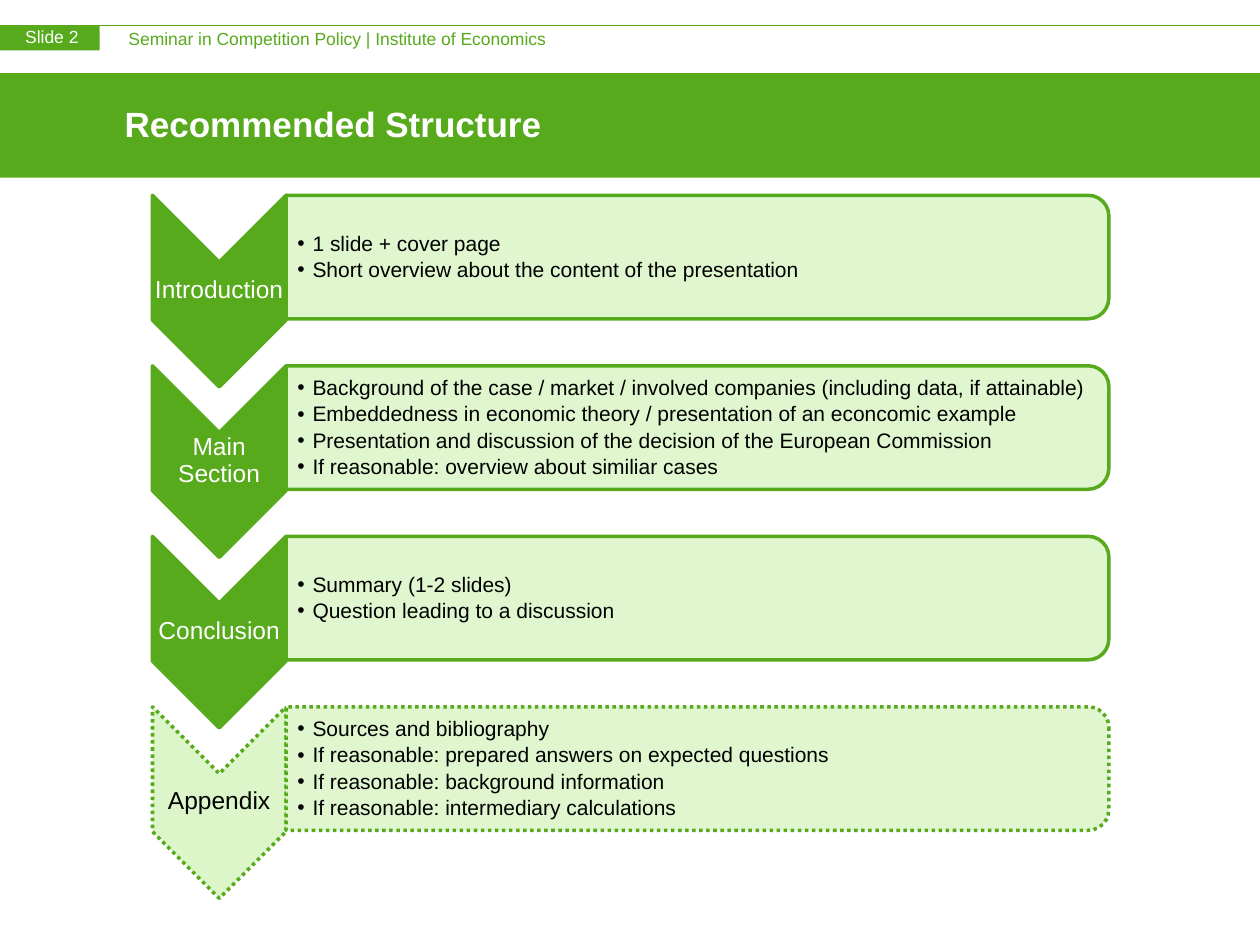
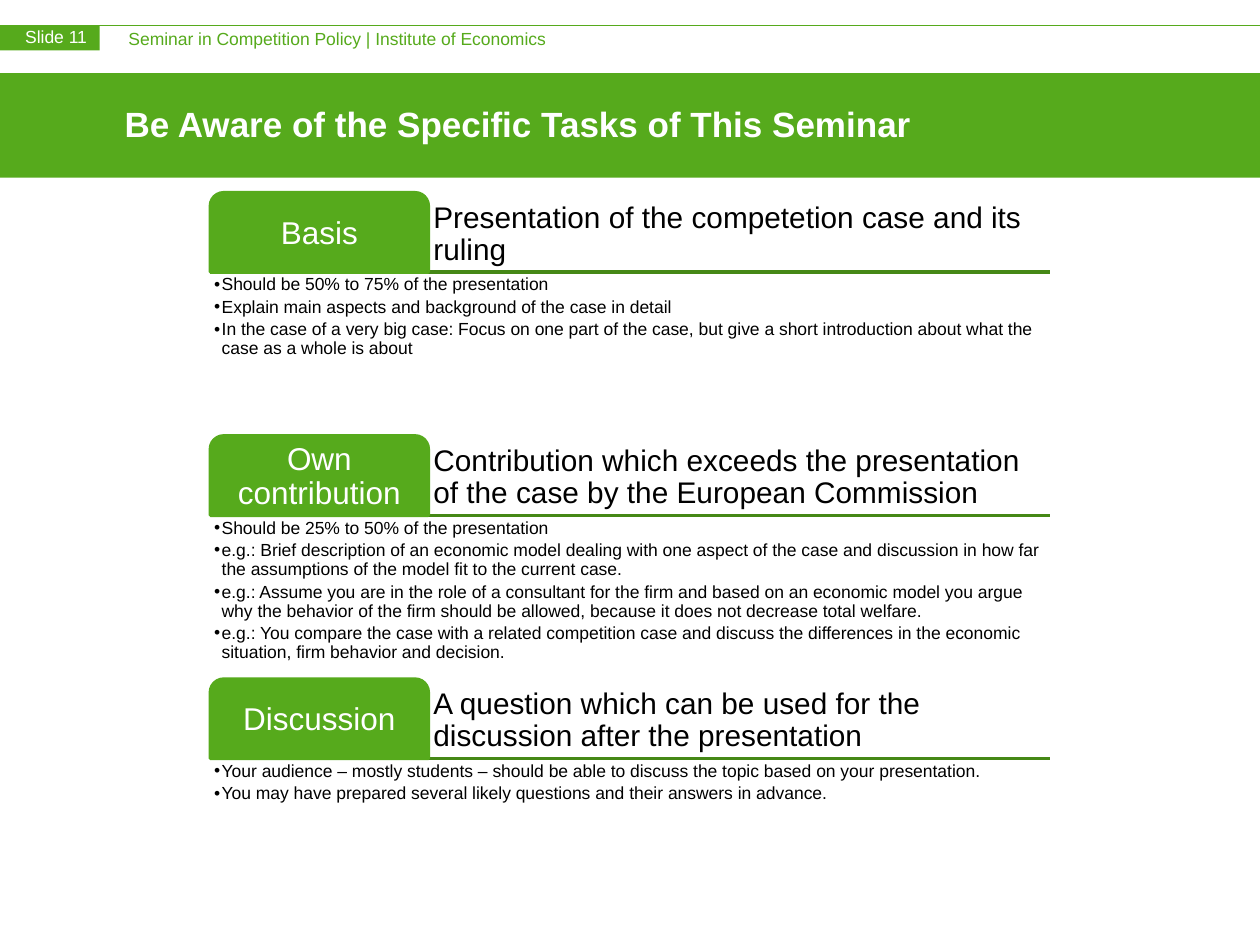
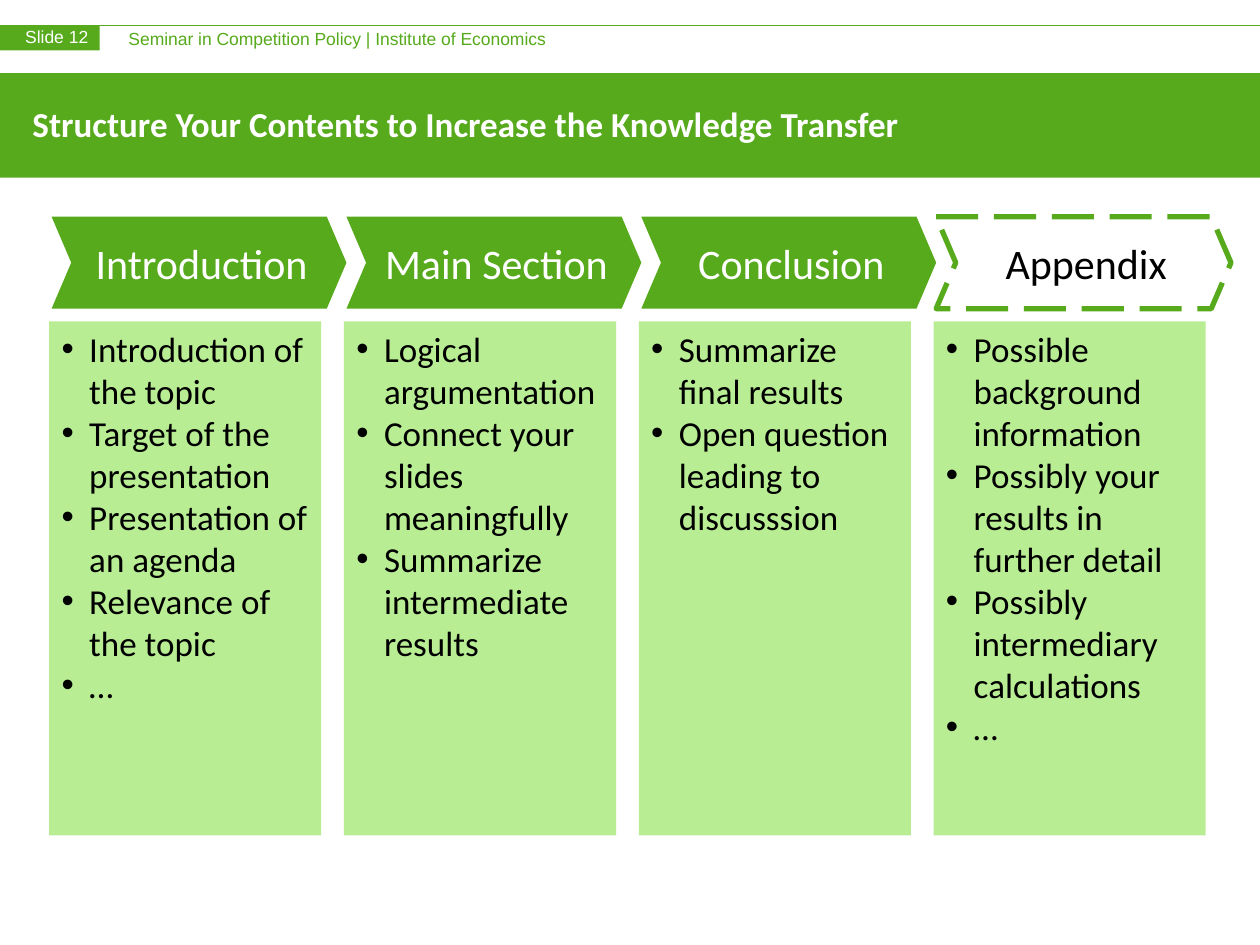
from lxml import etree
from pptx import Presentation
from pptx.dml.color import RGBColor
from pptx.enum.dml import MSO_LINE
from pptx.enum.shapes import MSO_CONNECTOR, MSO_SHAPE
from pptx.enum.text import MSO_ANCHOR, PP_ALIGN
from pptx.oxml.ns import qn
from pptx.util import Inches, Pt

GREEN = RGBColor(0x56, 0xAA, 0x1C)
DARK_GREEN = RGBColor(0x45, 0x88, 0x16)
PALE_GREEN = RGBColor(0xDC, 0xF6, 0xC9)
LIGHT_GREEN = RGBColor(0xB8, 0xED, 0x94)
WHITE = RGBColor(0xFF, 0xFF, 0xFF)
BLACK = RGBColor(0, 0, 0)

STRUCTURE = [
    ("Introduction", [
        "1 slide + cover page",
        "Short overview about the content of the presentation"]),
    ("Main Section", [
        "Background of the case / market / involved companies (including data, if attainable)",
        "Embeddedness in economic theory / presentation of an econcomic example",
        "Presentation and discussion of the decision of the European Commission",
        "If reasonable: overview about similiar cases"]),
    ("Conclusion", [
        "Summary (1-2 slides)",
        "Question leading to a discussion"]),
    ("Appendix", [
        "Sources and bibliography",
        "If reasonable: prepared answers on expected questions",
        "If reasonable: background information",
        "If reasonable: intermediary calculations"]),
]

TASKS = [
    ("Basis", "Presentation of the competetion case and its ruling", [
        "Should be 50% to 75% of the presentation",
        "Explain main aspects and background of the case in detail",
        "In the case of a very big case: Focus on one part of the case, but give a short "
        "introduction about what the case as a whole is about"]),
    ("Own contribution",
     "Contribution which exceeds the presentation of the case by the European Commission", [
         "Should be 25% to 50% of the presentation",
         "e.g.: Brief description of an economic model dealing with one aspect of the case and "
         "discussion in how far the assumptions of the model fit to the current case.",
         "e.g.: Assume you are in the role of a consultant for the firm and based on an economic "
         "model you argue why the behavior of the firm should be allowed, because it does not "
         "decrease total welfare.",
         "e.g.: You compare the case with a related competition case and discuss the differences "
         "in the economic situation, firm behavior and decision."]),
    ("Discussion", "A question which can be used for the discussion after the presentation", [
        "Your audience – mostly students – should be able to discuss the topic based on your "
        "presentation.",
        "You may have prepared several likely questions and their answers in advance."]),
]

CONTENTS = [
    ("Introduction", ["Introduction of the topic", "Target of the presentation",
                      "Presentation of an agenda", "Relevance of the topic", "…"]),
    ("Main Section", ["Logical argumentation", "Connect your slides meaningfully",
                      "Summarize intermediate results"]),
    ("Conclusion", ["Summarize final results", "Open question leading to discusssion"]),
    ("Appendix", ["Possible background information", "Possibly your results in further detail",
                  "Possibly intermediary calculations", "…"]),
]


def add_line(s, x1, x2, y, color, width):
    line = s.shapes.add_connector(MSO_CONNECTOR.STRAIGHT, Inches(x1), Inches(y),
                                  Inches(x2), Inches(y))
    line.line.color.rgb = color
    line.line.width = Pt(width)
    etree.SubElement(line._element.spPr, qn("a:effectLst"))


def add_block(s, kind, x, y, w, h, fill=None, line=None, width=2, dash=None, turned=False):
    """Add a preset shape; a turned one is rotated 90° and fills the given box."""
    if turned:
        x, y, w, h = x + (w - h) / 2, y + (h - w) / 2, h, w
    sp = s.shapes.add_shape(kind, Inches(x), Inches(y), Inches(w), Inches(h))
    sp.shadow.inherit = False
    sp.rotation = 90 if turned else 0
    if fill is None:
        sp.fill.background()
    else:
        sp.fill.solid()
        sp.fill.fore_color.rgb = fill
    if line is None:
        sp.line.fill.background()
    else:
        sp.line.color.rgb = line
        sp.line.width = Pt(width)
        sp.line.dash_style = dash
    return sp


def set_opacity(sp, percent):
    color = sp._element.spPr.find(qn("a:solidFill"))[0]
    etree.SubElement(color, qn("a:alpha"), val=str(percent * 1000))


def add_bullet(p, indent):
    pPr = p._p.get_or_add_pPr()
    pPr.set("marL", str(Inches(indent)))
    pPr.set("indent", str(-Inches(indent)))
    etree.SubElement(pPr, qn("a:buFont"), typeface="Arial")
    etree.SubElement(pPr, qn("a:buChar"), char="•")


def write(sp, lines, size, color=BLACK, font="Arial", bold=False, align=PP_ALIGN.LEFT,
          anchor=MSO_ANCHOR.TOP, insets=(0, 0, 0, 0), spacing=None, after=None, indent=None):
    """Fill a shape with paragraphs; an indent makes them bullets."""
    tf = sp.text_frame
    tf.word_wrap = True
    tf.vertical_anchor = anchor
    tf.margin_left, tf.margin_top, tf.margin_right, tf.margin_bottom = map(Inches, insets)
    tf.text = "\n".join(lines)
    for p in tf.paragraphs:
        p.alignment = align
        if indent:
            add_bullet(p, indent)
        if spacing:
            p.line_spacing = spacing
        if after:
            p.space_after = Pt(after)
        for r in p.runs:
            r.font.name = font
            r.font.size = Pt(size)
            r.font.bold = bold
            r.font.color.rgb = color


def add_text(s, x, y, w, h, lines, size, **style):
    box = s.shapes.add_textbox(Inches(x), Inches(y), Inches(w), Inches(h))
    write(box, lines, size, **style)


def add_slide(prs, number, title, title_x=0.89, title_font="Arial"):
    """Add a blank slide with the header strip and the title band."""
    s = prs.slides.add_slide(prs.slide_layouts[6])
    add_line(s, 0, 10, 0.2, GREEN, 0.75)
    add_block(s, MSO_SHAPE.RECTANGLE, 0, 0.2, 0.79, 0.2, GREEN)
    add_text(s, 1.02, 0.22, 6.56, 0.17,
             ["Seminar in Competition Policy | Institute of Economics"], 10, color=GREEN)
    add_text(s, 0.2, 0.21, 0.62, 0.17, [f"Slide {number}"], 10, color=WHITE)
    add_block(s, MSO_SHAPE.RECTANGLE, 0, 0.58, 10, 0.83, GREEN)
    add_text(s, title_x, 0.62, 10 - title_x, 0.72, [title], 20, color=WHITE, font=title_font,
             bold=True, anchor=MSO_ANCHOR.MIDDLE, insets=(0.1, 0.05, 0.1, 0.05),
             spacing=Pt(24))
    return s


def add_structure_row(s, y, label, points, optional):
    dash = MSO_LINE.ROUND_DOT if optional else None
    add_block(s, MSO_SHAPE.CHEVRON, 1.21, y, 1.06, 1.52, PALE_GREEN if optional else GREEN,
              GREEN, dash=dash, turned=True)
    add_text(s, 1.21, y + 0.53, 1.06, 0.45, [label], 14, color=BLACK if optional else WHITE,
             align=PP_ALIGN.CENTER, anchor=MSO_ANCHOR.MIDDLE, insets=(0.01,) * 4, spacing=0.9)
    panel = add_block(s, MSO_SHAPE.ROUND_2_SAME_RECTANGLE, 2.27, y, 6.53, 0.98, PALE_GREEN,
                      GREEN, dash=dash, turned=True)
    set_opacity(panel, 90)
    add_text(s, 2.27, y + 0.05, 6.48, 0.89, points, 12, anchor=MSO_ANCHOR.MIDDLE,
             insets=(0.09, 0.01, 0.01, 0.01), spacing=0.9, after=2, indent=0.12)


def add_task(s, y, label, heading, points):
    left, tab_w, tab_h, width = 1.67, 1.73, 0.63, 6.66
    add_line(s, left, left + width, y + tab_h, DARK_GREEN, 2)
    add_text(s, left + tab_w, y, width - tab_w, tab_h, [heading], 17,
             anchor=MSO_ANCHOR.BOTTOM, insets=(0.04,) * 4, spacing=0.9)
    tab = add_block(s, MSO_SHAPE.ROUND_2_SAME_RECTANGLE, left, y, tab_w, tab_h, GREEN, GREEN)
    tab.adjustments[0] = 0.167
    add_text(s, left + 0.03, y + 0.03, tab_w - 0.06, tab_h - 0.03, [label], 18, color=WHITE,
             align=PP_ALIGN.CENTER, anchor=MSO_ANCHOR.MIDDLE, insets=(0.04,) * 4, spacing=0.9)
    add_text(s, left, y + tab_h, width, 1.27, points, 10, insets=(0.03,) * 4, spacing=0.9,
             after=2, indent=0.06)


def add_content_column(s, x, label, points, optional):
    column = add_block(s, MSO_SHAPE.RECTANGLE, x, 2.55, 2.16, 4.08, LIGHT_GREEN)
    write(column, points, 20, font="Calibri", insets=(0.1, 0.05, 0.1, 0.05), indent=0.22)
    if optional:
        look = {"line": GREEN, "width": 3, "dash": MSO_LINE.LONG_DASH}
    else:
        look = {"fill": GREEN}
    chevron = add_block(s, MSO_SHAPE.CHEVRON, x + 0.02, 1.72, 2.34, 0.73, **look)
    chevron.adjustments[0] = 0.214
    write(chevron, [label], 24, color=BLACK if optional else WHITE, font="Calibri",
          align=PP_ALIGN.CENTER, anchor=MSO_ANCHOR.MIDDLE, insets=(0.14, 0.05, 0.1, 0.05))


def main():
    prs = Presentation()
    prs.slide_width, prs.slide_height = Inches(10), Inches(7.5)

    s = add_slide(prs, 2, "Recommended Structure")
    row_step = 4.06 / 3
    for i, (label, points) in enumerate(STRUCTURE):
        add_structure_row(s, 1.55 + i * row_step, label, points, label == "Appendix")

    s = add_slide(prs, 11, "Be Aware of the Specific Tasks of This Seminar")
    for i, (label, heading, points) in enumerate(TASKS):
        add_task(s, 1.53 + i * 1.93, label, heading, points)

    s = add_slide(prs, 12, "Structure Your Contents to Increase the Knowledge Transfer",
                  title_x=0.16, title_font="Calibri")
    for i, (label, points) in enumerate(CONTENTS):
        add_content_column(s, 0.39 + i * 2.34, label, points, label == "Appendix")

    prs.save("out.pptx")


if __name__ == "__main__":
    main()
